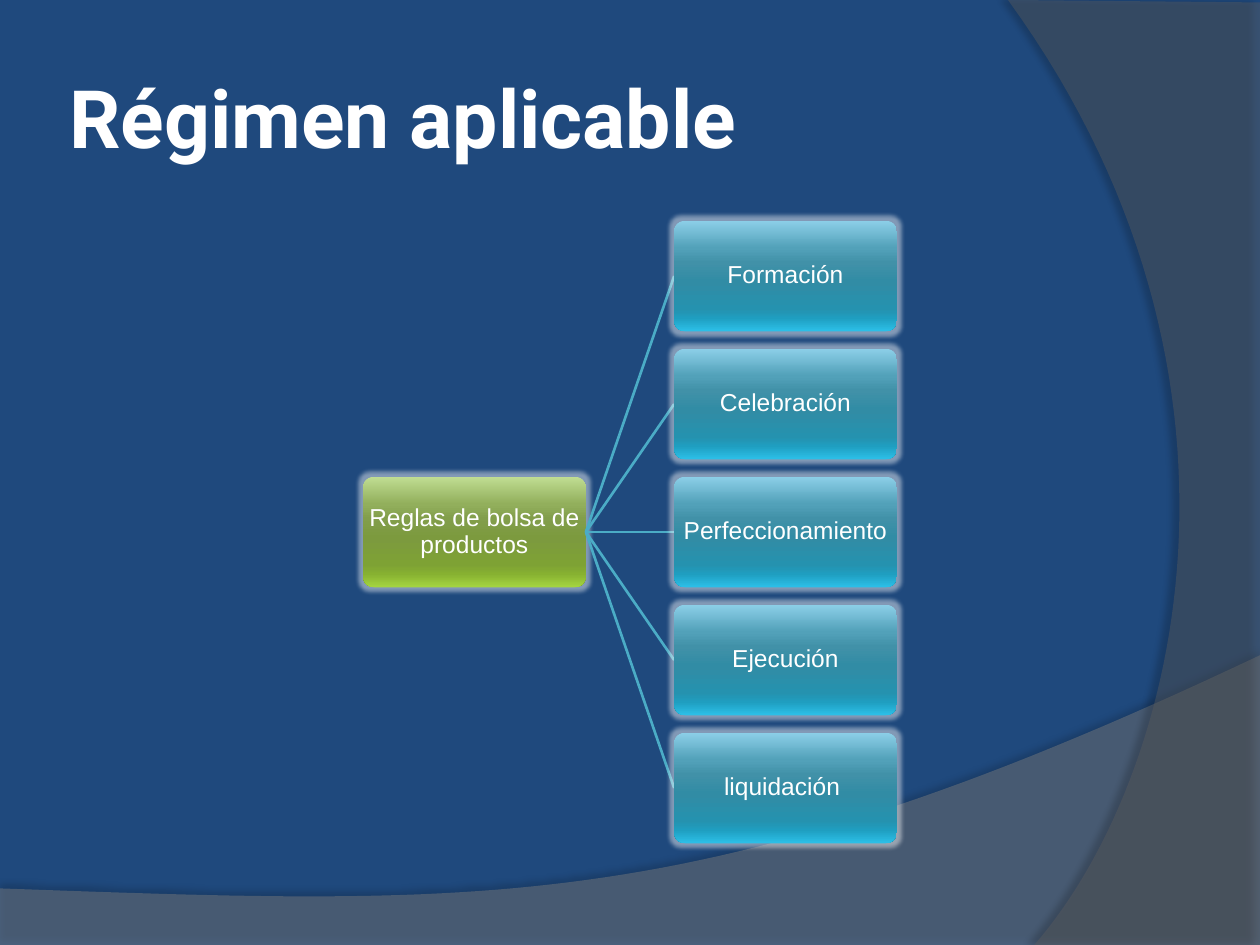
"""Build the slide that links the exchange rules to the five stages they govern."""
from pptx import Presentation
from pptx.dml.color import RGBColor
from pptx.enum.shapes import MSO_CONNECTOR, MSO_SHAPE
from pptx.enum.text import MSO_ANCHOR, PP_ALIGN
from pptx.oxml import parse_xml
from pptx.oxml.ns import nsdecls, qn
from pptx.util import Cm, Pt

ROUND = MSO_SHAPE.ROUNDED_RECTANGLE
LINE = MSO_CONNECTOR.STRAIGHT
MIDDLE = MSO_ANCHOR.MIDDLE
LEFT, CENTER = PP_ALIGN.LEFT, PP_ALIGN.CENTER

NAVY = RGBColor(0x1F, 0x49, 0x7D)
WHITE = RGBColor(0xFF, 0xFF, 0xFF)
BLACK = RGBColor(0x00, 0x00, 0x00)
AQUA = RGBColor(0x4B, 0xAC, 0xC6)
GREY = RGBColor(0x7F, 0x7F, 0x7F)
DARK = RGBColor(0x5E, 0x5E, 0x5E)

STOPS = (0, 25, 38, 55, 80, 88, 100)
GREEN = [RGBColor.from_string(c) for c in
         "C0DD92 92AF5C 829E4B 7C9A3E 7EA234 87B131 A5D640".split()]
BLUE = [RGBColor.from_string(c) for c in
        "8BCEE7 52A1B9 4191A8 318CA5 2592AF 1F9EC0 2CC0E8".split()]

HEAD = {"name": "Roboto", "size": Pt(46), "bold": True}
BODY = {"name": "Arial", "size": Pt(14), "bold": False}

WIDE, HIGH = 4.49, 2.23
ROOT, COL, TOP, STEP = 7.32, 13.59, 4.45, 2.58
STAGES = ("Formación", "Celebración", "Perfeccionamiento", "Ejecución", "liquidación ")


def node(tag, attrs="", body=""):
    return parse_xml(f"<a:{tag} {nsdecls('a')} {attrs}>{body}</a:{tag}>")


def tint(color, alpha):
    return f'<a:srgbClr val="{color}"><a:alpha val="{alpha * 1000}"/></a:srgbClr>'


def curve(start, one, two, end, count=60):
    spots = []
    for i in range(count + 1):
        t = i / count
        u = 1 - t
        spots.append(tuple(u**3 * a + 3 * u * u * t * b + 3 * u * t * t * c + t**3 * d
                           for a, b, c, d in zip(start, one, two, end)))
    return spots


class Sketch:
    def __init__(self, deck):
        self.slide = deck.slides.add_slide(deck.slide_layouts[6])
        self.shapes = self.slide.shapes
        back = self.slide.background.fill
        back.solid()
        back.fore_color.rgb = NAVY

    def label(self, shape, text, style, align, pad, space):
        frame = shape.text_frame
        look = {"word_wrap": True, "vertical_anchor": MIDDLE}
        look.update({f"margin_{side}": Cm(pad) for side in ("left", "top", "right", "bottom")})
        for key, value in look.items():
            setattr(frame, key, value)
        para = frame.paragraphs[0]
        para.alignment, para.line_spacing = align, space
        run = para.add_run()
        run.text = text
        for key, value in style.items():
            setattr(run.font, key, value)
        run.font.color.rgb = WHITE

    def effect(self, shape, item):
        shape.shadow.inherit = False
        shape._element.spPr.find(qn("a:effectLst")).append(item)

    def wave(self, spots, color, alpha, shade, dist, angle):
        points = [(Cm(x), Cm(y)) for x, y in spots]
        pen = self.shapes.build_freeform(*points[0])
        pen.add_line_segments(points[1:], close=True)
        shape = pen.convert_to_shape()
        shape.fill.solid()
        shape.fill.fore_color.rgb = color
        shape.line.fill.background()
        hue = shape._element.spPr.find(qn("a:solidFill"))[0]
        hue.append(node("alpha", f'val="{alpha * 1000}"'))
        attrs = f'blurRad="{Pt(4)}" dist="{Pt(dist)}" dir="{angle * 60000}" rotWithShape="0"'
        self.effect(shape, node("outerShdw", attrs, tint(BLACK, shade)))

    def title(self, text):
        shape = self.shapes.add_textbox(Cm(1.27), Cm(0.76), Cm(20.75), Cm(3.18))
        self.label(shape, text, HEAD, LEFT, 0.13, 1.0)

    def box(self, x, y, text, hues):
        shape = self.shapes.add_shape(ROUND, Cm(x), Cm(y), Cm(WIDE), Cm(HIGH))
        shape.adjustments[0] = 0.1
        shape.fill.gradient()
        shape.fill.gradient_angle = 270
        stops = shape._element.spPr.find(".//" + qn("a:gsLst"))
        stops[:] = [node("gs", f'pos="{stop * 1000}"', f'<a:srgbClr val="{hue}"/>')
                    for stop, hue in zip(STOPS, hues)]
        shape.line.fill.background()
        self.effect(shape, node("glow", f'rad="{Pt(5)}"', tint(WHITE, 45)))
        self.label(shape, text, BODY, CENTER, 0.03, 0.9)
        return shape

    def link(self, start, end):
        line = self.shapes.add_connector(LINE, 0, 0, 0, 0)
        line.begin_connect(start, 3)
        line.end_connect(end, 1)
        line.line.color.rgb = AQUA
        line.line.width = Pt(1.5)
        line._element.spPr.append(node("effectLst"))
        end._element.addprevious(line._element)


def main():
    deck = Presentation()
    deck.slide_width, deck.slide_height = Cm(25.4), Cm(19.05)
    page = Sketch(deck)
    low = curve((25.4, 13.21), (14.2, 18.52), (9.93, 18.26), (0, 17.91))
    page.wave([(0, 19.08), (25.4, 19.08)] + low, GREY, 45, 35, 3.5, 270)
    side = curve((20.85, 19.05), (23.75, 15.72), (25.86, 7.62), (20.32, 0))
    page.wave([(25.4, 0.05), (25.4, 19.05)] + side, DARK, 40, 45, 4, 180)
    page.title("Régimen aplicable")
    root = page.box(ROOT, TOP + 2 * STEP, "Reglas de bolsa de productos", GREEN)
    for i, text in enumerate(STAGES):
        page.link(root, page.box(COL, TOP + i * STEP, text, BLUE))
    deck.save("out.pptx")


if __name__ == "__main__":
    main()
